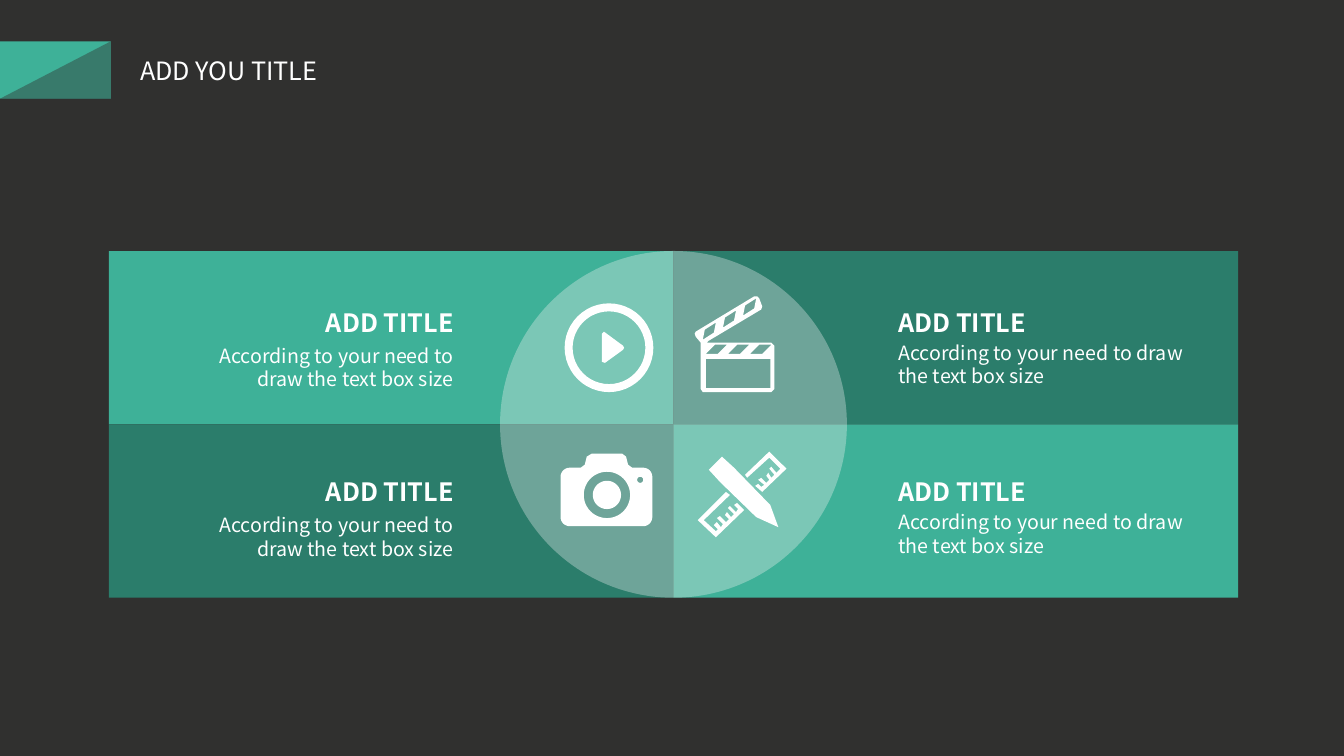
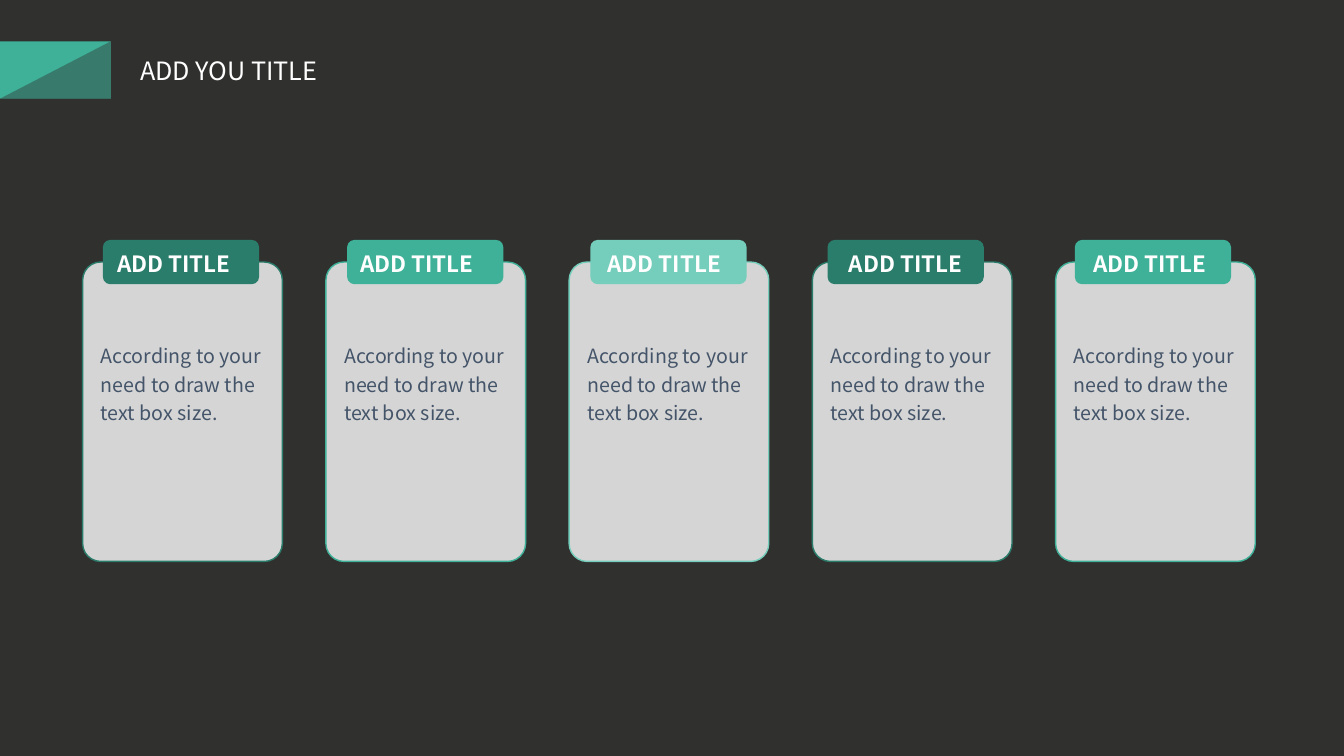
from dataclasses import dataclass
from math import cos, pi, sin

from lxml.etree import SubElement
from pptx import Presentation
from pptx.dml.color import RGBColor
from pptx.enum.shapes import MSO_SHAPE as Preset
from pptx.enum.text import MSO_ANCHOR as Anchor, PP_ALIGN as Align
from pptx.oxml.ns import qn
from pptx.util import Inches, Pt


@dataclass(frozen=True)
class Theme:
    font: str = "Noto Sans CJK JP"
    ground: str = "30302F"
    green: str = "3EB198"
    deep: str = "2B7D6B"
    mint: str = "74CEBB"
    white: str = "FFFFFF"
    mist: str = "F2F2F2"
    ink: str = "445469"
    title_size: int = 18
    heading_size: int = 18
    tab_size: int = 16
    body_size: int = 14


@dataclass(frozen=True)
class Box:
    left: float
    top: float
    width: float
    height: float

    def inside(self, left, top, width, height):
        """Return a box whose place is measured from this box's corner."""
        return Box(self.left + left, self.top + top, width, height)

    def lengths(self):
        return [Inches(n) for n in (self.left, self.top, self.width, self.height)]


THEME = Theme()
PAGE_SIZE = (13.33, 7.5)
TITLE_ONLY = 5


def paint(shape, color, opacity=None, line=None):
    shape.shadow.inherit = False
    shape.fill.solid()
    shape.fill.fore_color.rgb = RGBColor.from_string(color)
    if opacity is not None:
        tint = shape.element.spPr.find(qn("a:solidFill"))[0]
        SubElement(tint, qn("a:alpha")).set("val", str(opacity * 1000))
    if line:
        shape.line.color.rgb = RGBColor.from_string(line)
        shape.line.width = Pt(1)
    else:
        shape.line.fill.background()


def add_block(page, preset, box, color, opacity=None, line=None, adjust=None):
    shape = page.shapes.add_shape(preset, *box.lengths())
    paint(shape, color, opacity, line)
    if adjust is not None:
        shape.adjustments[0] = adjust
    return shape


def write(shape, text, size, color=THEME.white, bold=False, align=Align.LEFT,
          anchor=Anchor.TOP, insets=(0, 0, 0, 0), spacing=None):
    """Put one formatted paragraph in a shape; insets run left, top, right, bottom."""
    frame = shape.text_frame
    frame.word_wrap = True
    frame.vertical_anchor = anchor
    (frame.margin_left, frame.margin_top,
     frame.margin_right, frame.margin_bottom) = [Inches(n) for n in insets]
    para = frame.paragraphs[0]
    para.alignment = align
    if spacing:
        para.line_spacing = spacing
    span = para.add_run()
    span.text = text
    span.font.name = THEME.font
    span.font.size = Pt(size)
    span.font.bold = bold
    span.font.color.rgb = RGBColor.from_string(color)


def add_text(page, box, text, size, **style):
    write(page.shapes.add_textbox(*box.lengths()), text, size, **style)


def add_outline(page, box, contours, color=THEME.white):
    """Draw closed contours as one shape; inner contours become holes."""
    builder = None
    for contour in contours:
        start, *rest = [(Inches(x), Inches(y)) for x, y in contour]
        if builder is None:
            builder = page.shapes.build_freeform(*start)
        else:
            builder.move_to(*start)
        builder.add_line_segments(rest, close=True)
    paint(builder.convert_to_shape(Inches(box.left), Inches(box.top)), color)


def arc(x, y, radius, start=0, sweep=360, steps=48):
    angles = [(start + sweep * n / steps) * pi / 180 for n in range(steps + 1)]
    return [(x + radius * cos(a), y + radius * sin(a)) for a in angles]


def repeat(contour, count, dx, dy=0):
    return [[(x + n * dx, y + n * dy) for x, y in contour] for n in range(count)]


def add_play_icon(page, box):
    add_outline(page, box, [[(0.37, 0.3), (0.39, 0.28), (0.58, 0.42), (0.59, 0.44),
                             (0.58, 0.46), (0.4, 0.59), (0.37, 0.58)]])
    add_block(page, Preset.DONUT, box.inside(0, 0, 0.88, 0.88), THEME.white,
              adjust=0.09)


def add_clapper_icon(page, box):
    board = [(0.76, 0.47), (0.12, 0.47), (0.14, 0.45), (0.66, 0.14), (0.67, 0.11),
             (0.64, 0.03), (0.62, 0.01), (0.59, 0.01), (0.01, 0.36), (0, 0.38),
             (0.01, 0.41), (0.06, 0.47), (0.06, 0.93), (0.08, 0.96), (0.76, 0.96),
             (0.79, 0.93), (0.79, 0.5)]
    arm_stripe = [(0.5, 0.1), (0.61, 0.03), (0.59, 0.13), (0.48, 0.2)]
    base_stripe = [(0.2, 0.49), (0.32, 0.49), (0.23, 0.58), (0.11, 0.58)]
    screen = [(0.11, 0.63), (0.75, 0.63), (0.75, 0.92), (0.11, 0.92)]
    add_outline(page, box, [board, screen, *repeat(arm_stripe, 3, -0.2, 0.12),
                            *repeat(base_stripe, 3, 0.22)])


def add_camera_icon(page, box):
    corners = [(0.82, 0.23, 270), (0.82, 0.63, 0), (0.09, 0.63, 90), (0.09, 0.23, 180)]
    body = [point for x, y, start in corners
            for point in arc(x, y, 0.09, start, 90, steps=8)]
    hump = [(0.2, 0.14), (0.24, 0.11), (0.26, 0.03), (0.31, 0), (0.61, 0),
            (0.65, 0.03), (0.67, 0.11), (0.71, 0.14)]
    add_outline(page, box, [body + hump, arc(0.46, 0.41, 0.23),
                            arc(0.46, 0.41, 0.14), arc(0.79, 0.26, 0.03)])


def add_tools_icon(page, box):
    upper_ruler = [
        (0.71, 0.06), (0.82, 0.17), (0.78, 0.21), (0.73, 0.15), (0.71, 0.17),
        (0.76, 0.23), (0.73, 0.26), (0.7, 0.21), (0.68, 0.24), (0.71, 0.28),
        (0.68, 0.31), (0.63, 0.26), (0.6, 0.28), (0.66, 0.33), (0.63, 0.35),
        (0.6, 0.32), (0.57, 0.34), (0.64, 0.4), (0.88, 0.17), (0.71, 0),
        (0.47, 0.23), (0.49, 0.26)]
    lower_ruler = [
        (0.36, 0.53), (0.4, 0.57), (0.38, 0.6), (0.32, 0.54), (0.3, 0.56),
        (0.36, 0.62), (0.33, 0.65), (0.29, 0.6), (0.27, 0.63), (0.31, 0.67),
        (0.28, 0.7), (0.22, 0.64), (0.19, 0.66), (0.25, 0.72), (0.23, 0.75),
        (0.19, 0.7), (0.16, 0.73), (0.2, 0.77), (0.18, 0.79), (0.06, 0.68),
        (0.32, 0.43), (0.28, 0.4), (0, 0.68), (0.18, 0.85), (0.46, 0.58),
        (0.39, 0.51)]
    pencil = [(0.36, 0.16), (0.24, 0.05), (0.11, 0.18), (0.22, 0.3), (0.58, 0.65),
              (0.8, 0.75), (0.72, 0.53)]
    add_outline(page, box, [upper_ruler, lower_ruler, pencil])


def add_page(deck, title):
    """Add a slide with the corner band and the formatted title."""
    page = deck.slides.add_slide(deck.slide_layouts[TITLE_ONLY])
    band = Box(0, 0.41, 1.1, 0.57)
    add_block(page, Preset.RECTANGLE, band, THEME.green)
    shade = add_block(page, Preset.RIGHT_TRIANGLE, band, THEME.ground, opacity=42)
    shade.element.spPr.xfrm.set("flipH", "1")
    holder = page.shapes.title
    holder.left, holder.top, holder.width, holder.height = (
        band.inside(1.29, 0.09, 2.1, 0.4).lengths())
    write(holder, title, THEME.title_size, anchor=Anchor.MIDDLE,
          insets=(0.1, 0.05, 0.1, 0.05))
    return page


def add_caption(page, box, heading, body, align, body_drop):
    add_text(page, box.inside(0, 0, box.width, 0.3), heading, THEME.heading_size,
             bold=True, align=align)
    add_text(page, box.inside(0, body_drop, box.width, 0.47), body, THEME.body_size,
             align=align)


def add_quadrants(page, box):
    """Fill the box with four panels, a central disc, icons and captions."""
    width, height = box.width / 2, box.height / 2
    for row in range(2):
        for column in range(2):
            color = THEME.green if row == column else THEME.deep
            add_block(page, Preset.RECTANGLE,
                      box.inside(column * width, row * height, width, height), color)
    add_block(page, Preset.OVAL,
              box.inside(width - height, 0, box.height, box.height),
              THEME.mist, opacity=34)

    icons = [(add_play_icon, 4.52, 0.52), (add_clapper_icon, 5.81, 0.44),
             (add_camera_icon, 4.48, 2.01), (add_tools_icon, 5.84, 1.99)]
    for add_icon, left, top in icons:
        add_icon(page, box.inside(left, top, 0.9, 0.9))

    sides = [(0.66, 2.76, Align.RIGHT, 0.36), (7.83, 2.9, Align.LEFT, 0.33)]
    for row in range(2):
        for left, caption_width, align, body_drop in sides:
            add_caption(page, box.inside(left, 0.56 + row * 1.68, caption_width, 0.85),
                        "ADD TITLE", "According to your need to draw the text box size",
                        align, body_drop)


def add_card(page, box, color, tab_left, label_indent):
    add_block(page, Preset.ROUNDED_RECTANGLE, box, THEME.white, opacity=80,
              line=color, adjust=0.09)
    tab = add_block(page, Preset.ROUNDED_RECTANGLE,
                    box.inside(tab_left, -0.22, 1.55, 0.44), color)
    write(tab, "ADD TITLE", THEME.tab_size, bold=True, anchor=Anchor.MIDDLE,
          insets=(label_indent, 0.03, 0, 0))
    add_text(page, box.inside(0.18, 0.77, 1.62, 0.85),
             "According to your need to draw the text box size.",
             THEME.body_size, color=THEME.ink, spacing=1.2)


def add_card_row(page, box):
    cards = [(THEME.deep, 0.2, 0.12), (THEME.green, 0.21, 0.11),
             (THEME.mint, 0.21, 0.15), (THEME.deep, 0.15, 0.19),
             (THEME.green, 0.19, 0.16)]
    card_width = 1.98
    pitch = (box.width - card_width) / (len(cards) - 1)
    for index, card in enumerate(cards):
        add_card(page, box.inside(index * pitch, 0, card_width, box.height), *card)


def main():
    deck = Presentation()
    deck.slide_width, deck.slide_height = [Inches(n) for n in PAGE_SIZE]
    ground = deck.slide_master.background.fill
    ground.solid()
    ground.fore_color.rgb = RGBColor.from_string(THEME.ground)
    add_quadrants(add_page(deck, "ADD YOU TITLE"), Box(1.08, 2.49, 11.2, 3.44))
    add_card_row(add_page(deck, "ADD YOU TITLE"), Box(0.82, 2.6, 11.63, 2.97))
    deck.save("out.pptx")


if __name__ == "__main__":
    main()
